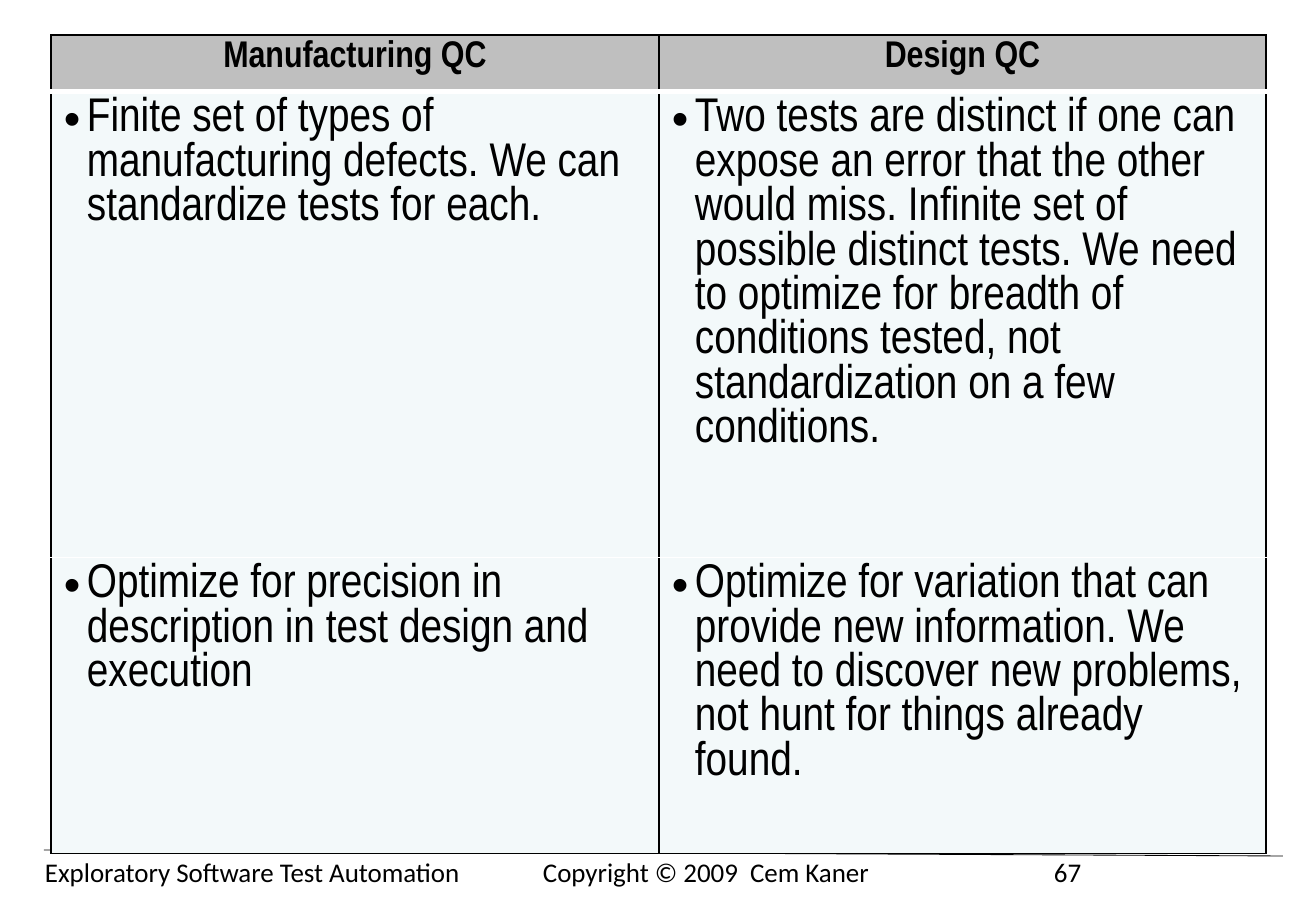
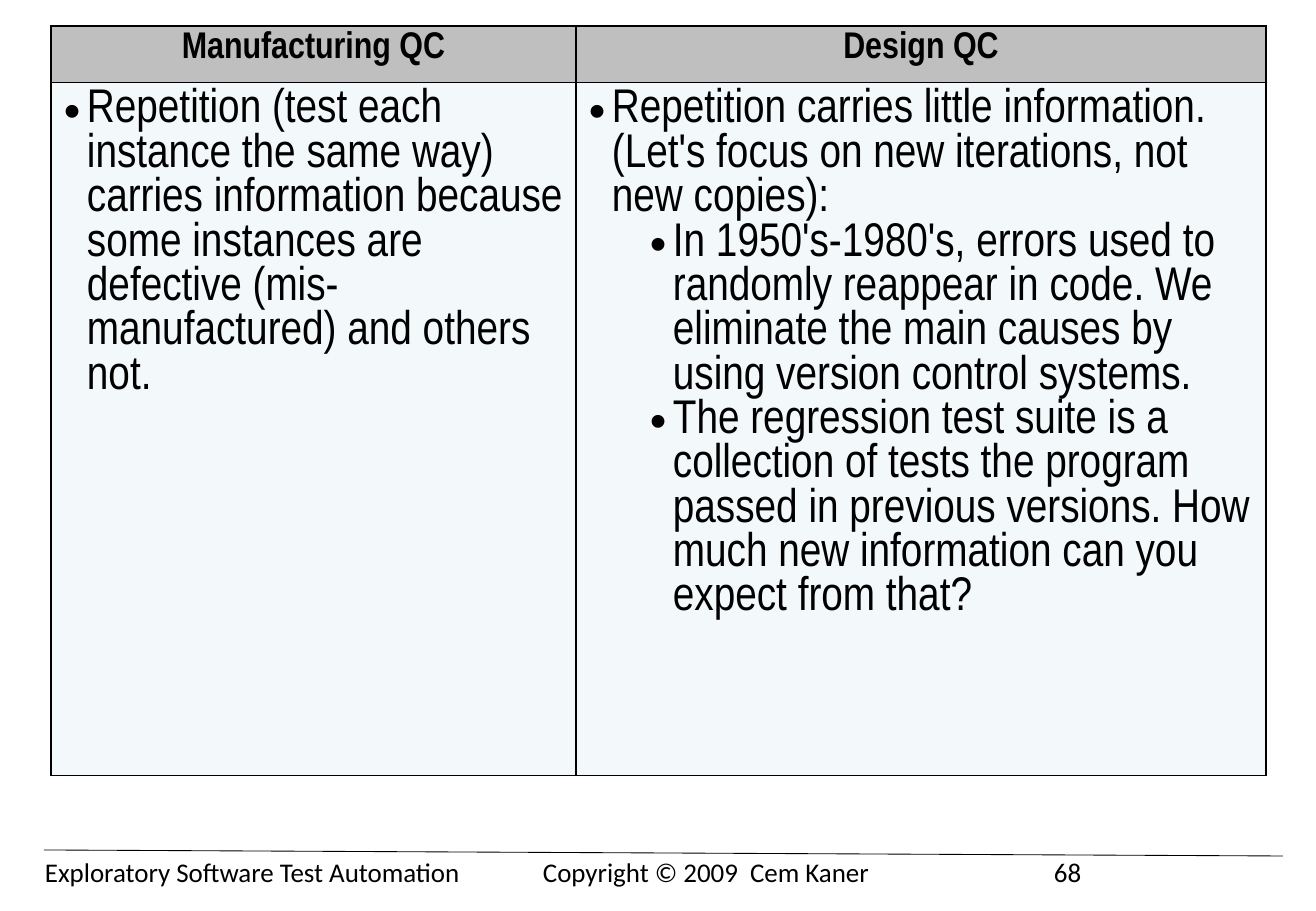
import pptx
import pptx.util
import pptx.dml.color
import pptx.enum.text
import pptx.enum.shapes
import pptx.oxml
import pptx.oxml.ns

SCALE = 7526
BLACK, WHITE, GREY, PALE = "000000", "FFFFFF", "BFBFBF", "F3F9FA"
NS = pptx.oxml.ns.nsdecls("a")


def px(n):
    return pptx.util.Emu(n * SCALE)


def paint(color, hue):
    color.rgb = pptx.dml.color.RGBColor.from_string(hue)


heads = ["Manufacturing QC", "Design QC"]
pages = [
    {
        "num": 67, "top": 35, "cols": [608, 607], "rows": [56, 466, 296],
        "rules": [(BLACK, 1), (WHITE, 3), (WHITE, 1), (BLACK, 1)],
        "body": [
            [[(0, "Finite set of types of manufacturing defects. We can standardize tests for each.")],
             [(0, "Two tests are distinct if one can expose an error that the other would miss. Infinite set of possible distinct tests. We need to optimize for breadth of conditions tested, not standardization on a few conditions.")]],
            [[(0, "Optimize for precision in description in test design and execution")],
             [(0, "Optimize for variation that can provide new information. We need to discover new problems, not hunt for things already found.")]],
        ],
    },
    {
        "num": 68, "top": 26, "cols": [525, 690], "rows": [56, 693],
        "rules": [(BLACK, 1), (BLACK, 1), (BLACK, 1)],
        "body": [
            [[(0, "Repetition (test each instance the same way) carries information because some instances are defective (mis-manufactured) and others not.")],
             [(0, "Repetition carries little information. (Let's focus on new iterations, not new copies):"),
              (1, "In 1950's-1980's, errors used to randomly reappear in code. We eliminate the main causes by using version control systems."),
              (1, "The regression test suite is a collection of tests the program passed in previous versions. How much new information can you expect from that?")]],
        ],
    },
]

deck = pptx.Presentation()
deck.slide_width, deck.slide_height = px(1316), px(911)

for page in pages:
    slide = deck.slides.add_slide(deck.slide_layouts[6])

    foot = slide.shapes.add_textbox(px(33), px(850), px(1244), px(45))
    foot.text_frame.word_wrap = True
    para = foot.text_frame.paragraphs[0]
    para.text = f"Exploratory Software Test Automation\tCopyright © 2009  Cem Kaner\t{page['num']}"
    for run in para.runs:
        run.font.name, run.font.size = "Calibri", pptx.util.Pt(16)
        paint(run.font.color, BLACK)
    stops = "".join(f'<a:tab pos="{px(n)}" algn="l"/>' for n in (498, 1009))
    para._p.get_or_add_pPr().append(pptx.oxml.parse_xml(f"<a:tabLst {NS}>{stops}</a:tabLst>"))

    line = slide.shapes.add_connector(
        pptx.enum.shapes.MSO_CONNECTOR.STRAIGHT, px(44), px(850), px(1283), px(856))
    line.line.width = pptx.util.Pt(0.5)
    paint(line.line.color, BLACK)
    line._element.spPr.append(pptx.oxml.parse_xml(f"<a:effectLst {NS}/>"))

    rows, cols = page["rows"], page["cols"]
    grid = slide.shapes.add_table(
        len(rows), len(cols), px(51), px(page["top"]), px(sum(cols)), px(sum(rows))).table
    grid.horz_banding = False
    for col, wide in zip(grid.columns, cols):
        col.width = px(wide)
    for row, high in zip(grid.rows, rows):
        row.height = px(high)

    cells = [[[(0, head)] for head in heads]] + page["body"]
    for r, row in enumerate(cells):
        for c, items in enumerate(row):
            cell = grid.cell(r, c)
            cell.margin_left = cell.margin_right = px(13)
            cell.margin_top = cell.margin_bottom = px(6)
            cell.fill.solid()
            paint(cell.fill.fore_color, PALE if r else GREY)

            edges = [("L", (BLACK, 1)), ("R", (BLACK, 1)),
                     ("T", page["rules"][r]), ("B", page["rules"][r + 1])]
            for i, (side, (hue, size)) in enumerate(edges):
                cell._tc.tcPr.insert(i, pptx.oxml.parse_xml(
                    f'<a:ln{side} {NS} w="{pptx.util.Pt(size)}"><a:solidFill>'
                    f'<a:srgbClr val="{hue}"/></a:solidFill></a:ln{side}>'))

            frame = cell.text_frame
            for i, (level, text) in enumerate(items):
                para = frame.add_paragraph() if i else frame.paragraphs[0]
                para.text = text
                font = para.runs[0].font
                font.name, font.bold = "Arial Narrow", r == 0
                font.size = pptx.util.Pt(28 if r else 22)
                paint(font.color, BLACK)
                if r == 0:
                    para.alignment = pptx.enum.text.PP_ALIGN.CENTER
                    continue
                para.level = level
                props = para._p.get_or_add_pPr()
                props.set("marL", str(px(23 + 61 * level)))
                props.set("indent", str(px(-23)))
                props.append(pptx.oxml.parse_xml(f'<a:buFont {NS} typeface="Arial"/>'))
                props.append(pptx.oxml.parse_xml(f'<a:buChar {NS} char="•"/>'))

deck.save("out.pptx")
